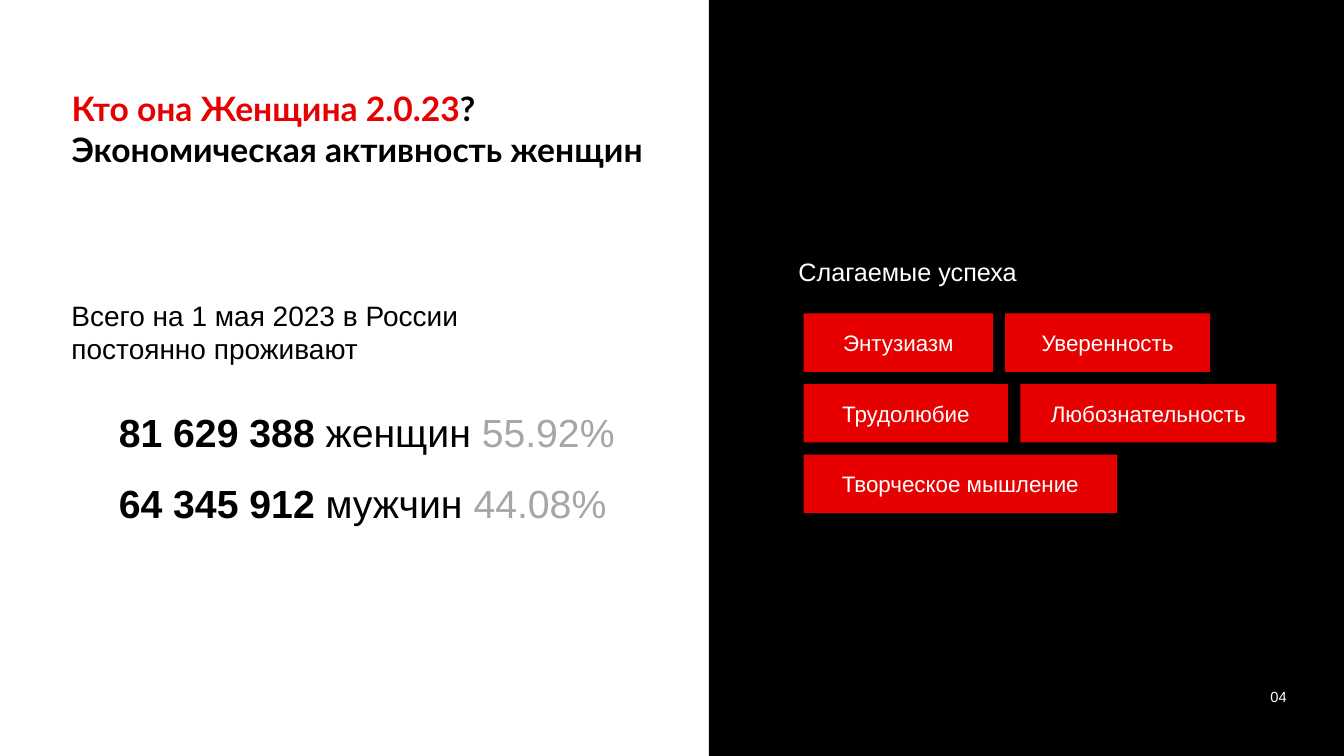
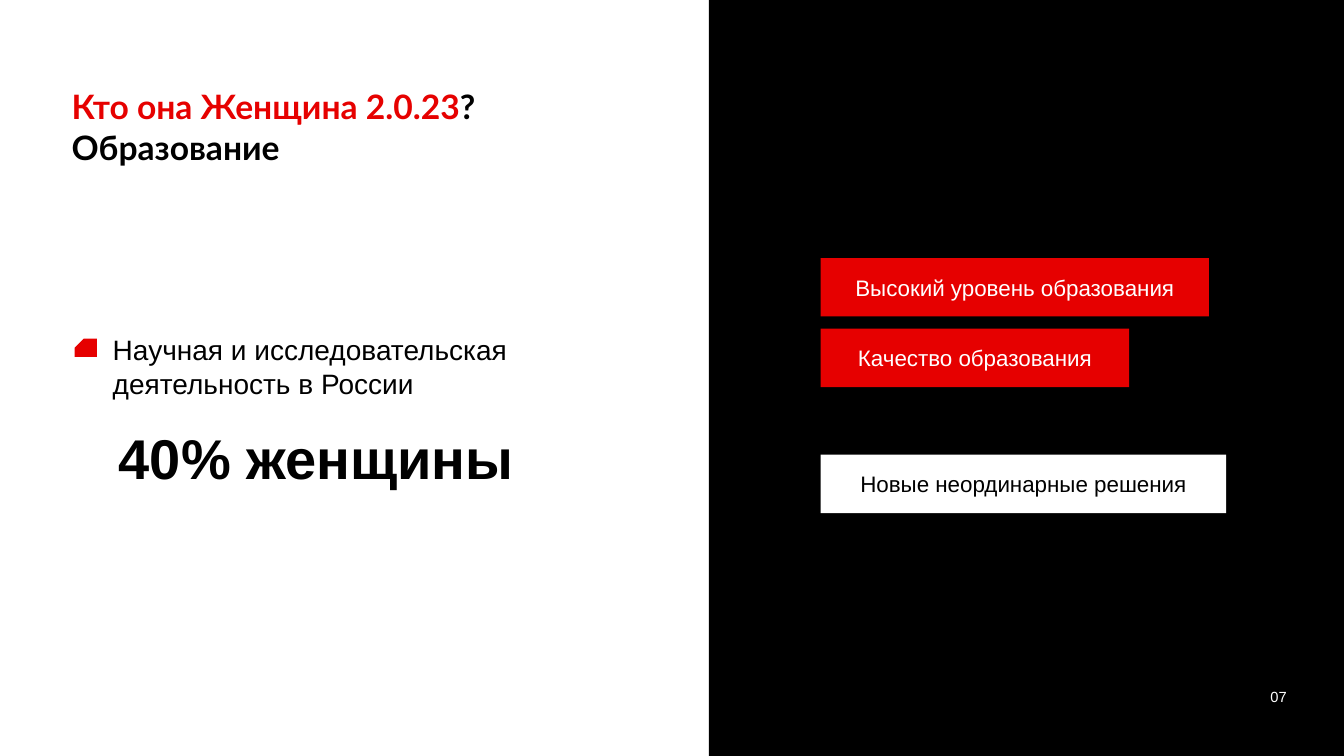
from pptx import Presentation
from pptx.dml.color import RGBColor
from pptx.enum import shapes, text
from pptx.util import Inches, Pt

RED, TITLE_RED = "E60000", "E60100"
BLACK, WHITE, GREY = "000000", "FFFFFF", "A6A6A6"
TITLE_FONT, BODY_FONT = "Lato", "Arial"
TAG_HEIGHT, TAG_GAP = 0.58, 0.12
ALIGN, ANCHOR = text.PP_ALIGN, text.MSO_ANCHOR


def rgb(hex_color):
    return RGBColor.from_string(hex_color)


def add_run(paragraph, wording, size, color, bold=False, font=BODY_FONT):
    run = paragraph.add_run()
    run.text = wording
    run.font.name, run.font.size, run.font.bold = font, Pt(size), bold
    run.font.color.rgb = rgb(color)


def add_block(slide, preset, box, fill):
    block = slide.shapes.add_shape(preset, *map(Inches, box))
    block.shadow.inherit = False
    block.fill.solid()
    block.fill.fore_color.rgb = rgb(fill)
    block.line.fill.background()
    return block


def add_label(slide, box, runs, align=ALIGN.LEFT, anchor=ANCHOR.TOP):
    """Add a one-paragraph text box; each run is (wording, size, colour, bold)."""
    frame = slide.shapes.add_textbox(*map(Inches, box)).text_frame
    frame.word_wrap = True
    frame.vertical_anchor = anchor
    paragraph = frame.paragraphs[0]
    paragraph.alignment = align
    for run in runs:
        add_run(paragraph, *run)


def add_title(slide, topic, top):
    title = slide.shapes.title
    title.left, title.top, title.width, title.height = map(
        Inches, (0.61, top, 6.05, 1.23))
    frame = title.text_frame
    frame.word_wrap = True
    frame.auto_size = text.MSO_AUTO_SIZE.NONE
    frame.vertical_anchor = ANCHOR.MIDDLE
    paragraph = frame.paragraphs[0]
    paragraph.alignment = ALIGN.LEFT
    add_run(paragraph, "Кто она Женщина 2.0.23", 24, TITLE_RED, True, TITLE_FONT)
    add_run(paragraph, "?", 24, BLACK, True, TITLE_FONT)
    paragraph.add_line_break()
    add_run(paragraph, topic, 24, BLACK, True, TITLE_FONT)


def add_split_slide(deck, topic, number, title_top):
    """Start a slide with a title at left and a numbered black panel at right."""
    slide = deck.slides.add_slide(deck.slide_layouts[5])
    add_block(slide, shapes.MSO_SHAPE.RECTANGLE, (7.03, 0, 6.3, 7.5), BLACK)
    add_title(slide, topic, title_top)
    add_label(slide, (11.99, 6.71, 0.87, 0.4), [(number, 10.5, WHITE)],
              ALIGN.RIGHT, ANCHOR.MIDDLE)
    return slide


def add_tags(slide, left, top, rows, fill=RED, color=WHITE):
    """Lay out rows of (wording, width) tags with equal gaps."""
    for index, row in enumerate(rows):
        tag_left = left
        tag_top = top + index * (TAG_HEIGHT + TAG_GAP)
        for wording, width in row:
            tag = add_block(slide, shapes.MSO_SHAPE.RECTANGLE,
                            (tag_left, tag_top, width, TAG_HEIGHT), fill)
            tag.text_frame.vertical_anchor = ANCHOR.MIDDLE
            paragraph = tag.text_frame.paragraphs[0]
            paragraph.alignment = ALIGN.CENTER
            add_run(paragraph, wording, 16, color)
            tag_left += width + TAG_GAP


def add_bullet_mark(slide, box):
    mark = add_block(slide, shapes.MSO_SHAPE.SNIP_1_RECTANGLE, box, RED)
    mark.adjustments[0] = 0.5
    mark._element.spPr.get_or_add_xfrm().set("flipH", "1")


def build_activity_slide(deck):
    slide = add_split_slide(deck, "Экономическая активность женщин", "04", 0.66)
    add_label(slide, (0.61, 2.91, 4.52, 0.77),
              [("Всего на 1 мая 2023 в России постоянно проживают", 20, BLACK)])
    population = [("81 629 388 ", "женщин ", "55.92%"),
                  ("64 345 912 ", "мужчин ", "44.08%")]
    for index, (count, group, share) in enumerate(population):
        add_label(slide, (1.08, 4 + index * 0.71, 5.47, 0.57),
                  [(count, 28, BLACK, True), (group, 28, BLACK), (share, 28, GREY)])
    add_label(slide, (7.82, 2.49, 3.22, 0.44), [("Слагаемые успеха", 18, WHITE)])
    add_tags(slide, 7.97, 3.11, [
        [("Энтузиазм", 1.88), ("Уверенность", 2.03)],
        [("Трудолюбие", 2.03), ("Любознательность", 2.54)],
        [("Творческое мышление", 3.11)],
    ])


def build_education_slide(deck):
    slide = add_split_slide(deck, "Образование", "07", 0.64)
    add_bullet_mark(slide, (0.74, 3.36, 0.22, 0.18))
    add_label(slide, (1.02, 3.25, 4.4, 0.77),
              [("Научная и исследовательская деятельность в России", 20, BLACK)])
    add_label(slide, (1.08, 4.15, 4.34, 0.77), [("40% женщины", 40, BLACK, True)])
    add_tags(slide, 8.14, 2.56, [
        [("Высокий уровень образования", 3.85)],
        [("Качество образования", 3.06)],
    ])
    add_tags(slide, 8.14, 4.51, [[("Новые неординарные решения", 4.02)]],
             WHITE, BLACK)


def main():
    deck = Presentation()
    deck.slide_width, deck.slide_height = Inches(13.33), Inches(7.5)
    build_activity_slide(deck)
    build_education_slide(deck)
    deck.save("out.pptx")


if __name__ == "__main__":
    main()
